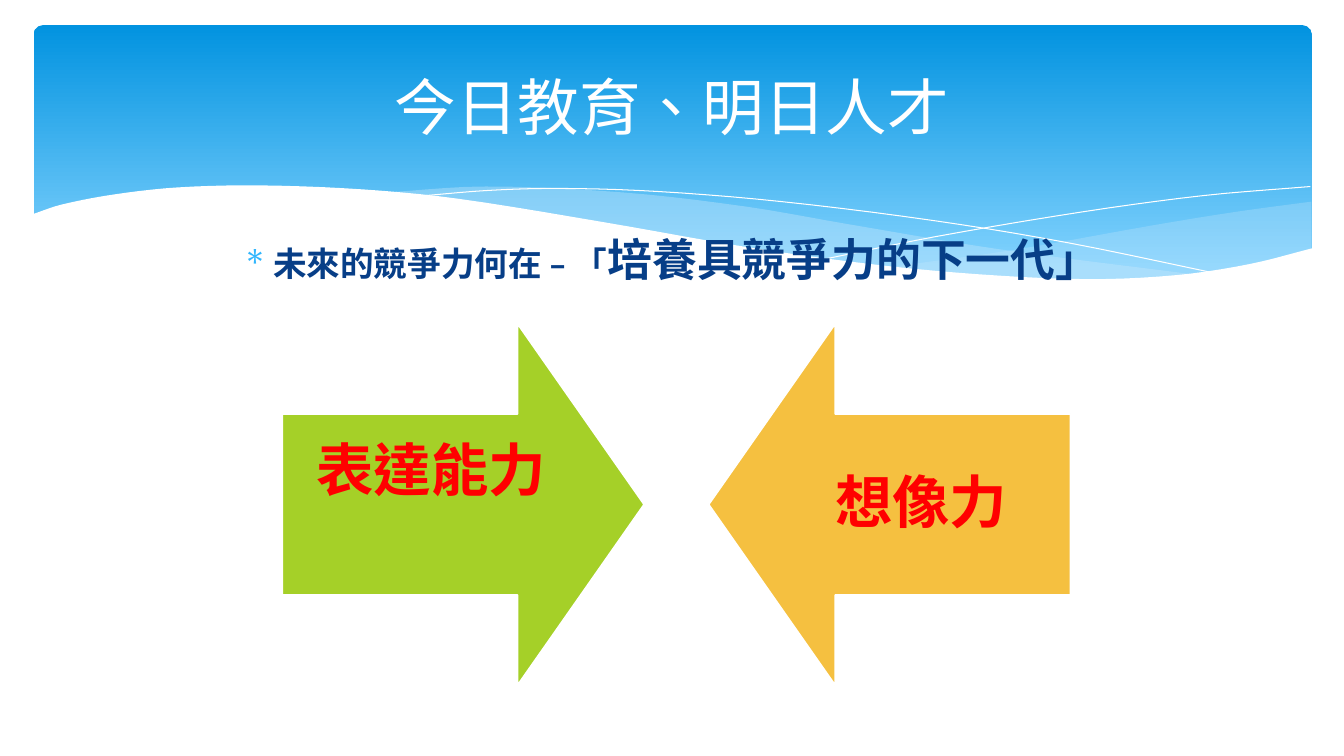
import lxml.etree
import pptx
import pptx.dml.color
import pptx.enum.shapes
import pptx.enum.text
import pptx.oxml.ns
import pptx.util

COLORS = {
    "white": "FFFFFF", "band_top": "0293E0", "band_bottom": "83D3FE",
    "wave": "C6E7FC", "bullet": "31B6FD", "navy": "073E87",
    "green": "A5D028", "amber": "F5C040", "red": "FF0000",
}
FONT = "Cabin"

# Curve knots, in percent of the slide's width and height.
RIGHT_WAVE = (
    [(66.15, 35.33), (75.38, 33.07), (86.03, 29.73), (92.03, 28), (97.58, 26.67)],
    [(97.58, 32.93), (92.85, 35.07), (88.05, 36.4), (81.38, 37.07), (74.48, 36.67),
     (66.15, 35.33)],
)
MIDDLE_WAVE = (
    [(28.65, 25.47), (36.15, 24.67), (46.43, 25.47), (55.5, 27.33), (62.93, 29.6),
     (74.18, 32.93), (89.25, 36.4)],
    [(89.25, 36.4), (80.7, 37.07), (72.23, 36.53), (61.8, 34.4), (44.93, 29.6),
     (36.23, 27.07), (28.65, 25.47)],
)
FALLING_LINE = [(30.9, 26), (36.3, 25.2), (41.63, 24.93), (48.9, 25.33), (58.13, 26.67),
                (69.53, 29.2), (79.5, 32.13), (90.75, 36.27)]
RISING_LINE = [(61.35, 34.27), (69.53, 31.33), (80.63, 28), (89.55, 25.87), (97.5, 24.67)]
WHITE_WAVE = (
    [(2.33, 28.4), (4.58, 27.07), (8.48, 25.73), (13.2, 24.8), (19.35, 24.53),
     (27.08, 25.07), (33.98, 26.27), (44.7, 29.33), (55.5, 32.67), (64.73, 34.93),
     (72.68, 36.27), (80.85, 36.93), (87.53, 36.4), (93, 34.93), (97.73, 32.8)],
    [(97.73, 43.87), (2.33, 43.87)],
)


def rgb(name):
    return pptx.dml.color.RGBColor.from_string(COLORS[name])


def smooth_curve(knots, steps=5):
    """Points of a cubic Hermite curve through knots that are ordered along x."""
    last = len(knots) - 1
    slopes = []
    for index in range(last + 1):
        (x0, y0), (x1, y1) = knots[max(index - 1, 0)], knots[min(index + 1, last)]
        slopes.append((y1 - y0) / (x1 - x0))
    points = [knots[0]]
    for index in range(last):
        (x0, y0), (x1, y1) = knots[index:index + 2]
        width = x1 - x0
        for step in range(1, steps + 1):
            t = step / steps
            rise = t * t * (3 - 2 * t)
            start = t * (1 - t) ** 2 * slopes[index]
            end = t * t * (t - 1) * slopes[index + 1]
            points.append((x0 + t * width, y0 + rise * (y1 - y0) + width * (start + end)))
    return points


class SlideBuilder:
    """Draws on one slide; every position is in percent of the slide's size."""

    def __init__(self, presentation):
        self.presentation = presentation
        self.slide = presentation.slides.add_slide(presentation.slide_layouts[5])
        self.shapes = self.slide.shapes

    def place(self, x, y):
        return (round(self.presentation.slide_width * x / 100),
                round(self.presentation.slide_height * y / 100))

    def box(self, left, top, width, height):
        return *self.place(left, top), *self.place(width, height)

    def gradient_band(self, box):
        kind = pptx.enum.shapes.MSO_SHAPE.ROUNDED_RECTANGLE
        shape = self.shapes.add_shape(kind, *self.box(*box))
        shape.adjustments[0] = 0.034
        shape.shadow.inherit = False
        shape.line.fill.background()
        shape.fill.gradient()
        shape.fill.gradient_angle = 270
        stops = zip(shape.fill.gradient_stops, (0, 0.9), ("band_top", "band_bottom"))
        for stop, position, color in stops:
            stop.position = position
            stop.color.rgb = rgb(color)

    def outline(self, points, close):
        places = [self.place(*point) for point in points]
        builder = self.shapes.build_freeform(*places[0])
        builder.add_line_segments(places[1:], close=close)
        shape = builder.convert_to_shape()
        shape.shadow.inherit = False
        return shape

    def wave(self, edges, color, opacity=100):
        shape = self.outline([p for edge in edges for p in smooth_curve(edge)], True)
        shape.line.fill.background()
        shape.fill.solid()
        shape.fill.fore_color.rgb = rgb(color)
        if opacity < 100:
            tag = pptx.oxml.ns.qn("a:srgbClr")
            color_element = next(shape._element.spPr.iter(tag))
            alpha = lxml.etree.SubElement(color_element, pptx.oxml.ns.qn("a:alpha"))
            alpha.set("val", str(opacity * 1000))

    def hairline(self, knots):
        shape = self.outline(smooth_curve(knots), False)
        shape.fill.background()
        shape.line.color.rgb = rgb("white")
        shape.line.width = 0

    def arrow(self, kind, box, color):
        shape = self.shapes.add_shape(kind, *self.box(*box))
        shape.adjustments[0], shape.adjustments[1] = 0.5, 0.35
        shape.shadow.inherit = False
        shape.fill.solid()
        shape.fill.fore_color.rgb = rgb(color)
        shape.line.color.rgb = rgb("white")
        shape.line.width = pptx.util.Pt(1.25)

    def set_text(self, shape, runs, color, bold, anchor="MIDDLE", align="CENTER", inset=0.0):
        """Fill a text frame with one paragraph of (text, size) runs."""
        frame = shape.text_frame
        side, edge = pptx.util.Inches(inset), pptx.util.Inches(inset / 2)
        settings = {
            "word_wrap": True, "auto_size": pptx.enum.text.MSO_AUTO_SIZE.NONE,
            "vertical_anchor": pptx.enum.text.MSO_ANCHOR[anchor],
            "margin_left": side, "margin_right": side,
            "margin_top": edge, "margin_bottom": edge,
        }
        for name, value in settings.items():
            setattr(frame, name, value)
        paragraph = frame.paragraphs[0]
        paragraph.alignment = pptx.enum.text.PP_ALIGN[align]
        for text, size in runs:
            run = paragraph.add_run()
            run.text = text
            style = {"name": FONT, "size": pptx.util.Pt(size), "bold": bold}
            for name, value in style.items():
                setattr(run.font, name, value)
            run.font.color.rgb = rgb(color)
            properties = run._r.get_or_add_rPr()
            properties.set("lang", "zh-TW")
            east_asian = lxml.etree.Element(pptx.oxml.ns.qn("a:ea"), typeface=FONT)
            properties.find(pptx.oxml.ns.qn("a:latin")).addnext(east_asian)
        return paragraph

    def title(self, text, box):
        shape = self.shapes.title
        shape.left, shape.top, shape.width, shape.height = self.box(*box)
        self.shapes._spTree.append(shape._element)
        self.set_text(shape, [(text, 44)], "white", False, inset=0.1)

    def label(self, text, box):
        shape = self.shapes.add_textbox(*self.box(*box))
        self.set_text(shape, [(text, 41)], "red", True).line_spacing = 0.9

    def bullet_text(self, runs, box):
        shape = self.shapes.add_textbox(*self.box(*box))
        paragraph = self.set_text(shape, runs, "navy", True, "TOP", "LEFT", 0.1)
        properties = paragraph._p.get_or_add_pPr()
        indent = pptx.util.Inches(0.3)
        properties.set("marL", str(indent))
        properties.set("indent", str(-indent))
        bullet_color = lxml.etree.SubElement(properties, pptx.oxml.ns.qn("a:buClr"))
        lxml.etree.SubElement(bullet_color, pptx.oxml.ns.qn("a:srgbClr"), val=COLORS["bullet"])
        lxml.etree.SubElement(properties, pptx.oxml.ns.qn("a:buChar"), char="∗")


def main():
    presentation = pptx.Presentation()
    presentation.slide_width = pptx.util.Inches(13.33)
    presentation.slide_height = pptx.util.Inches(7.5)
    builder = SlideBuilder(presentation)

    builder.gradient_band((2.5, 3.33, 95.1, 36))
    builder.wave(RIGHT_WAVE, "wave", 29)
    builder.wave(MIDDLE_WAVE, "wave", 40)
    for knots in (FALLING_LINE, RISING_LINE):
        builder.hairline(knots)
    builder.wave(WHITE_WAVE, "white")

    builder.bullet_text([("未來的競爭力何在 – 「", 24), ("培養具競爭力的下一代」", 32)],
                        (17.33, 30, 72.5, 12))
    builder.title("今日教育、明日人才", (5, 4.93, 90, 18.27))

    arrows = pptx.enum.shapes.MSO_SHAPE
    for kind, left, color, text, label_left, label_top in (
        (arrows.RIGHT_ARROW, 21, "green", "表達能力", 21, 50.67),
        (arrows.LEFT_ARROW, 52.73, "amber", "想像力", 57.45, 54.8),
    ):
        builder.arrow(kind, (left, 42.8, 26.93, 47.87), color)
        builder.label(text, (label_left, label_top, 22.2, 23.87))

    presentation.save("out.pptx")


if __name__ == "__main__":
    main()
